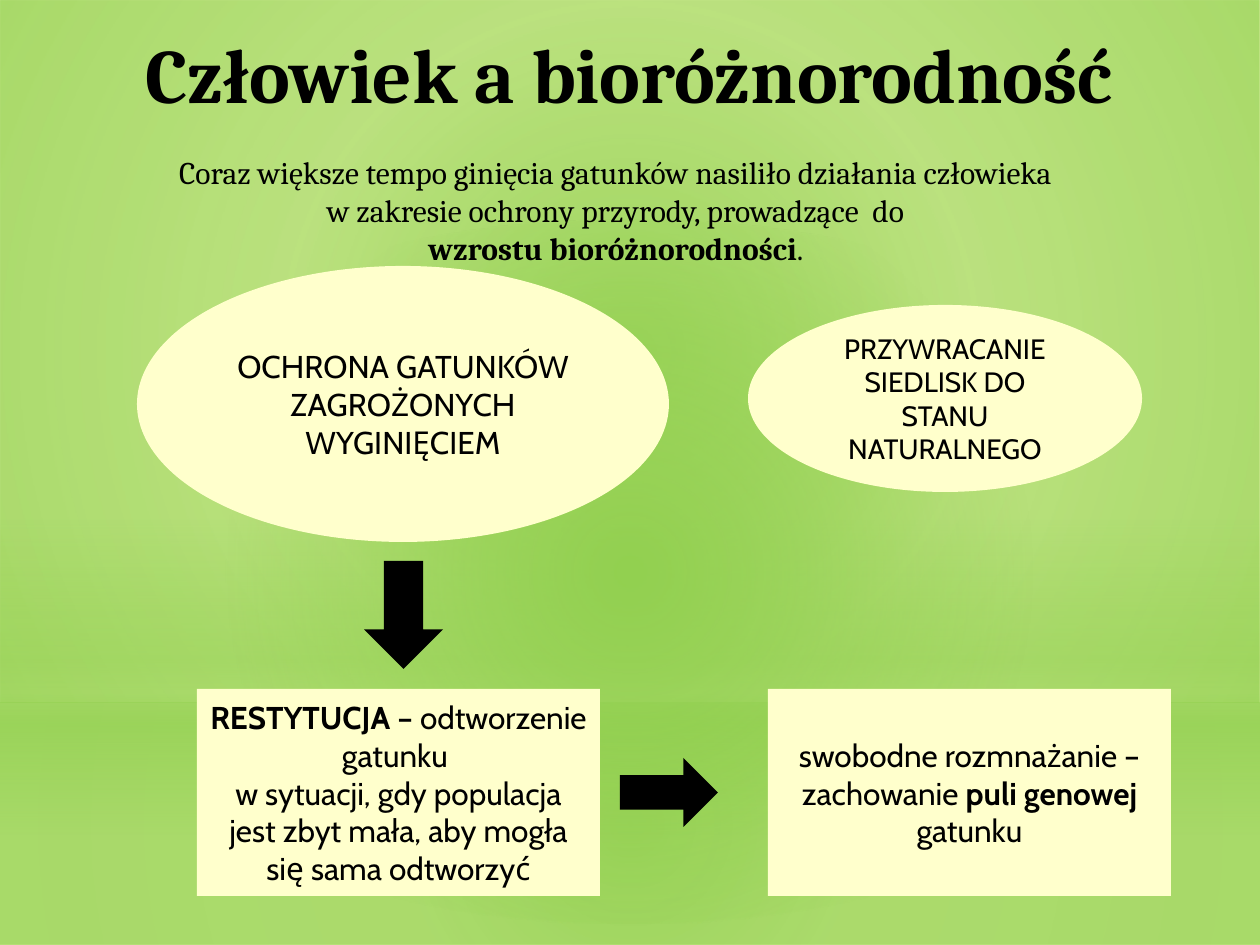
"""Build the slide on people and biodiversity."""
import lxml.etree
import pptx
import pptx.dml.color
import pptx.enum.shapes
import pptx.enum.text
import pptx.oxml.ns
import pptx.util

SHAPE = pptx.enum.shapes.MSO_SHAPE
ANCHOR = pptx.enum.text.MSO_ANCHOR
CREAM = pptx.dml.color.RGBColor(0xFF, 0xFF, 0xCC)
GREEN = pptx.dml.color.RGBColor(0x92, 0xD0, 0x50)
BLACK = pptx.dml.color.RGBColor(0, 0, 0)
HEADING_FONT, BODY_FONT = "Cambria", "Cabin"
EMU_PER_PX = 914400 / 126

TITLE = [[("Człowiek a bioróżnorodność", True)]]
INTRO = [
    [("Coraz większe tempo ginięcia gatunków nasiliło działania człowieka \n"
      "w zakresie ochrony przyrody, prowadzące  do ", False)],
    [("wzrostu bioróżnorodności", True), (". ", False)],
]
ACTIONS = [
    (SHAPE.OVAL, (137, 266, 532, 276), 18,
     [[("OCHRONA GATUNKÓW ZAGROŻONYCH WYGINIĘCIEM", False)]]),
    (SHAPE.OVAL, (748, 305, 394, 187), 16,
     [[("PRZYWRACANIE SIEDLISK DO STANU NATURALNEGO", False)]]),
    (SHAPE.RECTANGLE, (197, 689, 403, 207), 18,
     [[("RESTYTUCJA – ", True),
       ("odtworzenie gatunku \nw sytuacji, gdy populacja jest zbyt mała, "
        "aby mogła się sama odtworzyć", False)]]),
    (SHAPE.RECTANGLE, (768, 689, 403, 207), 18,
     [[("swobodne rozmnażanie – zachowanie ", False),
       ("puli genowej ", True), ("gatunku", False)]]),
]
ARROWS = [
    (SHAPE.DOWN_ARROW, (364, 561, 79, 108)),
    (SHAPE.RIGHT_ARROW, (620, 758, 98, 69)),
]
RADIAL = '<a:path path="circle"><a:fillToRect l="50000" t="50000" r="50000" b="50000"/></a:path>'
LINEAR = '<a:lin ang="5400000" scaled="0"/>'
GLOWS = [
    (SHAPE.RECTANGLE, (0, 703, 1260, 242), RADIAL, [(0, 91), (37, 76), (100, 79)]),
    (SHAPE.RECTANGLE, (0, 0, 1260, 703), RADIAL, [(0, 89), (48, 62), (100, 79)]),
    (SHAPE.RECTANGLE, (0, 519, 1260, 315), LINEAR,
     [(0, 0), (29, 30), (45, 40), (55, 26), (65, 60), (100, 0)]),
    (SHAPE.OVAL, (0, 220, 1260, 703), RADIAL, [(0, 100), (56, 0)]),
]


def px(length):
    return pptx.util.Emu(round(length * EMU_PER_PX))


def place(part, box):
    part.left, part.top, part.width, part.height = map(px, box)


def write(part, paragraphs, *, size, font, anchor=ANCHOR.MIDDLE):
    frame = part.text_frame
    frame.word_wrap = True
    frame.auto_size = pptx.enum.text.MSO_AUTO_SIZE.NONE
    frame.vertical_anchor = anchor
    for index, pieces in enumerate(paragraphs):
        paragraph = frame.add_paragraph() if index else frame.paragraphs[0]
        properties = paragraph._p.get_or_add_pPr()
        properties.set("marL", "0")
        properties.set("indent", "0")
        lxml.etree.SubElement(properties, pptx.oxml.ns.qn("a:buNone"))
        paragraph.alignment = pptx.enum.text.PP_ALIGN.CENTER
        paragraph.space_before = pptx.util.Pt(0)
        for wording, bold in pieces:
            for number, line in enumerate(wording.split("\n")):
                if number:
                    paragraph.add_line_break()
                run = paragraph.add_run()
                run.text = line
                run.font.size = pptx.util.Pt(size)
                run.font.name = font
                run.font.bold = bold
                run.font.color.rgb = BLACK


def add_figure(slide, preset, box, color):
    figure = slide.shapes.add_shape(preset, *map(px, box))
    figure.shadow.inherit = False
    figure.line.fill.background()
    figure.fill.solid()
    figure.fill.fore_color.rgb = color
    return figure


def add_glow(slide, preset, box, direction, stops):
    glow = add_figure(slide, preset, box, GREEN)
    colors = "".join(
        f'<a:gs pos="{position * 1000}"><a:srgbClr val="{GREEN}">'
        f'<a:alpha val="{opacity * 1000}"/></a:srgbClr></a:gs>'
        for position, opacity in stops)
    gradient = pptx.oxml.parse_xml(
        f'<a:gradFill {pptx.oxml.ns.nsdecls("a")} rotWithShape="1">'
        f'<a:gsLst>{colors}</a:gsLst>{direction}</a:gradFill>')
    properties = glow._element.spPr
    properties.replace(properties.find(pptx.oxml.ns.qn("a:solidFill")), gradient)
    return glow


def main():
    deck = pptx.Presentation()
    deck.slide_width, deck.slide_height = px(1260), px(945)
    slide = deck.slides.add_slide(deck.slide_layouts[1])
    slide.background.fill.solid()
    slide.background.fill.fore_color.rgb = CREAM

    title, intro = slide.placeholders
    for glow in GLOWS:
        title._element.addprevious(add_glow(slide, *glow)._element)

    place(title, (29, 20, 1201, 106))
    write(title, TITLE, size=44, font=HEADING_FONT)
    place(intro, (78, 147, 1082, 127))
    write(intro, INTRO, size=18, font=HEADING_FONT, anchor=ANCHOR.TOP)

    for preset, box, size, wording in ACTIONS:
        action = add_figure(slide, preset, box, CREAM)
        write(action, wording, size=size, font=BODY_FONT)
    for preset, box in ARROWS:
        add_figure(slide, preset, box, BLACK)

    deck.save("out.pptx")


if __name__ == "__main__":
    main()
